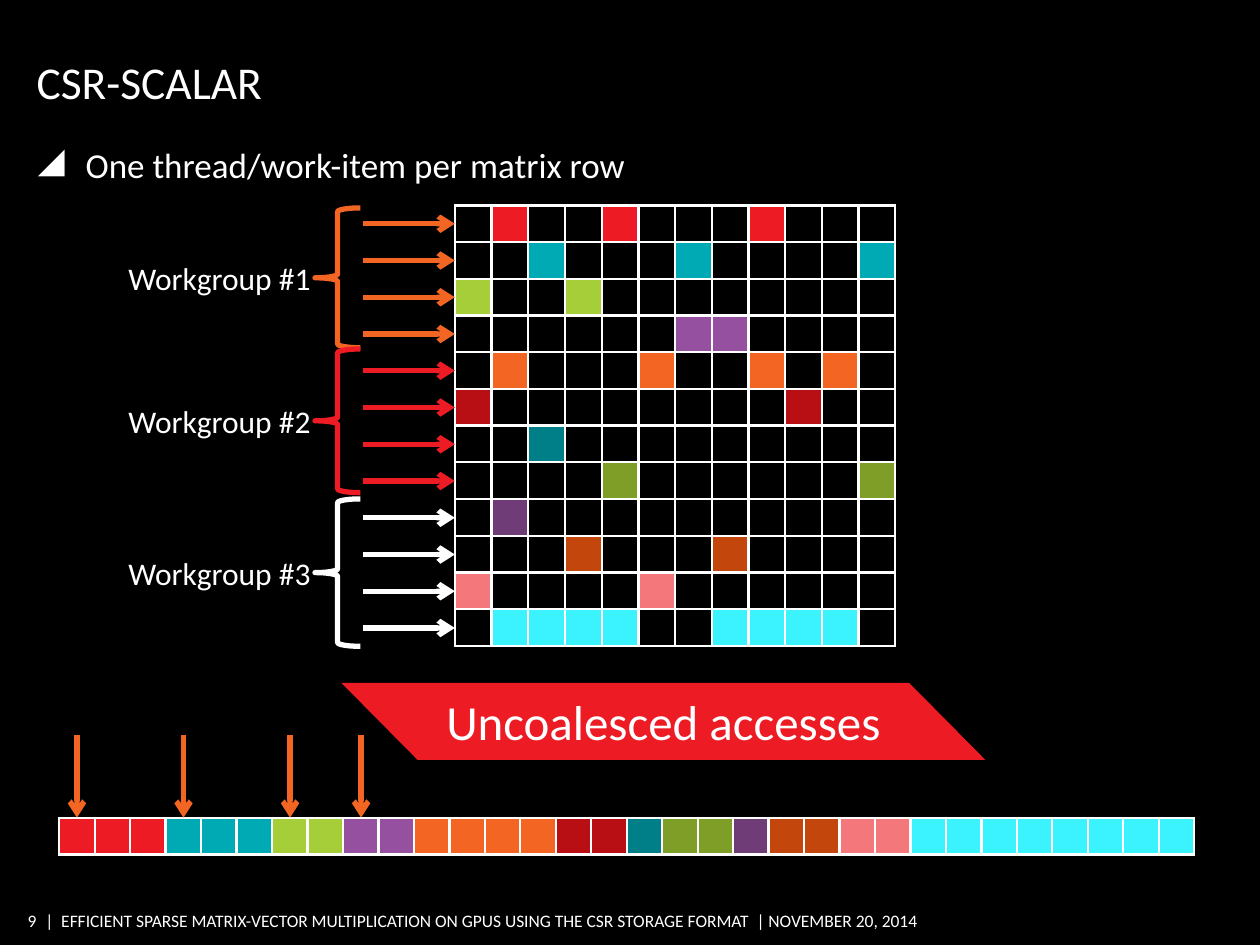
from lxml.etree import SubElement
from pptx import Presentation
from pptx.dml.color import RGBColor
from pptx.enum.shapes import MSO_CONNECTOR, MSO_SHAPE
from pptx.enum.text import MSO_ANCHOR, PP_ALIGN
from pptx.oxml.ns import qn
from pptx.util import Inches, Pt

WHITE, ORANGE, RED, BLACK = "FFFFFF", "F26522", "ED1C24", "000000"
TITLE = "CSR-SCALAR"
BULLET = "One thread/work-item per matrix row"
CALLOUT = "Uncoalesced accesses"
PAGE = "9"
FOOTER = ("|  EFFICIENT SPARSE MATRIX-VECTOR MULTIPLICATION ON GPUS "
          "USING THE CSR STORAGE FORMAT  | NOVEMBER 20, 2014")
MATRIX_ROWS = [
    (RED, [1, 4, 8]),
    ("00AAB5", [2, 6, 11]),
    ("A6CE39", [0, 3]),
    ("9650A0", [6, 7]),
    (ORANGE, [1, 5, 8, 10]),
    ("B80F15", [0, 9]),
    ("007F88", [2]),
    ("7E9E27", [4, 11]),
    ("703C78", [1]),
    ("C3470C", [3, 7]),
    ("F4777C", [0, 5]),
    ("3AF3FF", [1, 2, 3, 4, 7, 8, 9, 10]),
]
WORKGROUPS = [
    ("Workgroup #1", ORANGE, 1.65, 1.11),
    ("Workgroup #2", RED, 2.77, 1.14),
    ("Workgroup #3", WHITE, 3.96, 1.17),
]
GROUP_SIZE = 4
MATRIX_LEFT, MATRIX_TOP, MATRIX_SIDE = 3.61, 1.63, 3.5
ARRAY_LEFT, ARRAY_TOP, ARRAY_WIDTH = 0.47, 6.49, 9.02
CELL = MATRIX_SIDE / len(MATRIX_ROWS)


def color(value):
    return RGBColor.from_string(value)


def inches(*values):
    return [Inches(value) for value in values]


def write(frame, text, size=18, align=PP_ALIGN.LEFT, anchor=MSO_ANCHOR.TOP,
          insets=(0.1, 0.05, 0.1, 0.05), wrap=True, bullet=None):
    frame.word_wrap = wrap
    frame.vertical_anchor = anchor
    (frame.margin_left, frame.margin_top,
     frame.margin_right, frame.margin_bottom) = inches(*insets)
    paragraph = frame.paragraphs[0]
    paragraph.alignment = align
    if bullet:
        properties = paragraph._p.get_or_add_pPr()
        properties.set("marL", str(Inches(0.38)))
        properties.set("indent", str(-Inches(0.38)))
        bullet_color = SubElement(properties, qn("a:buClr"))
        SubElement(bullet_color, qn("a:srgbClr"), val=WHITE)
        SubElement(properties, qn("a:buChar"), char=bullet)
    run = paragraph.add_run()
    run.text = text
    run.font.name = "Calibri"
    run.font.size = Pt(size)
    run.font.color.rgb = color(WHITE)


def add_text(slide, box, text, **options):
    write(slide.shapes.add_textbox(*inches(*box)).text_frame, text, **options)


def add_arrow(slide, start, end, line_color):
    arrow = slide.shapes.add_connector(MSO_CONNECTOR.STRAIGHT, *inches(*start, *end))
    arrow.line.color.rgb = color(line_color)
    arrow.line.width = Pt(3)
    SubElement(arrow.line._get_or_add_ln(), qn("a:tailEnd"), type="arrow")
    SubElement(arrow._element.spPr, qn("a:effectLst"))


def format_cell(cell, fill_color):
    cell.margin_left = cell.margin_right = cell.margin_top = cell.margin_bottom = 0
    SubElement(cell.text_frame.paragraphs[0]._p, qn("a:endParaRPr"), sz="800")
    properties = cell._tc.get_or_add_tcPr()
    for side in ("lnL", "lnR", "lnT", "lnB"):
        border = SubElement(properties, qn(f"a:{side}"), w=str(Pt(1.5)))
        fill = SubElement(border, qn("a:solidFill"))
        SubElement(fill, qn("a:srgbClr"), val=WHITE)
    if fill_color:
        cell.fill.solid()
        cell.fill.fore_color.rgb = color(fill_color)
    else:
        cell.fill.background()


def add_grid(slide, left, top, width, height, fills):
    table = slide.shapes.add_table(
        len(fills), len(fills[0]), *inches(left, top, width, height)).table
    table.first_row = table.horz_banding = False
    for column in table.columns:
        column.width = Inches(width / len(fills[0]))
    for row_index, row in enumerate(fills):
        table.rows[row_index].height = Inches(height / len(fills))
        for column_index, fill_color in enumerate(row):
            format_cell(table.cell(row_index, column_index), fill_color)


def add_matrix(slide):
    count = len(MATRIX_ROWS)
    fills = [[row_color if column in filled else None for column in range(count)]
             for row_color, filled in MATRIX_ROWS]
    add_grid(slide, MATRIX_LEFT, MATRIX_TOP, MATRIX_SIDE, MATRIX_SIDE, fills)


def add_workgroups(slide):
    for group, (label, group_color, top, height) in enumerate(WORKGROUPS):
        add_text(slide, (0.92, top + height / 2 - 0.2, 1.68, 0.4), label, wrap=False)
        brace = slide.shapes.add_shape(
            MSO_SHAPE.LEFT_BRACE, *inches(2.5, top, 0.36, height))
        brace.shadow.inherit = False
        brace.fill.background()
        brace.line.color.rgb = color(group_color)
        brace.line.width = Pt(3)
        for row in range(group * GROUP_SIZE, (group + 1) * GROUP_SIZE):
            y = MATRIX_TOP + (row + 0.5) * CELL
            add_arrow(slide, (2.88, y), (MATRIX_LEFT, y), group_color)


def add_value_array(slide):
    values = [row_color for row_color, filled in MATRIX_ROWS for _ in filled]
    add_grid(slide, ARRAY_LEFT, ARRAY_TOP, ARRAY_WIDTH, CELL, [values])
    for row_color, _ in MATRIX_ROWS[:GROUP_SIZE]:
        x = ARRAY_LEFT + (values.index(row_color) + 0.5) * ARRAY_WIDTH / len(values)
        add_arrow(slide, (x, 5.83), (x, ARRAY_TOP), ORANGE)


def add_callout(slide):
    callout = slide.shapes.add_shape(
        MSO_SHAPE.PARALLELOGRAM, *inches(2.71, 5.42, 5.11, 0.61))
    callout.shadow.inherit = False
    callout.adjustments[0] = 0.99
    callout._element.spPr.find(qn("a:xfrm")).set("flipH", "1")
    callout.fill.solid()
    callout.fill.fore_color.rgb = color(RED)
    callout.line.fill.background()
    write(callout.text_frame, CALLOUT, size=28, align=PP_ALIGN.CENTER,
          anchor=MSO_ANCHOR.MIDDLE, wrap=False)


def main():
    """Build the CSR-Scalar slide and save it."""
    presentation = Presentation()
    presentation.slide_width, presentation.slide_height = inches(10, 7.5)
    slide = presentation.slides.add_slide(presentation.slide_layouts[6])
    slide.background.fill.solid()
    slide.background.fill.fore_color.rgb = color(BLACK)
    footer_style = dict(size=10, anchor=MSO_ANCHOR.MIDDLE,
                        insets=(0, 0.04, 0, 0.04), wrap=False)
    add_text(slide, (0.13, 7.18, 0.16, 0.26), PAGE, align=PP_ALIGN.RIGHT, **footer_style)
    add_text(slide, (0.36, 7.18, 7.08, 0.26), FOOTER, **footer_style)
    add_text(slide, (0.29, 0.34, 8.2, 0.52), TITLE, size=26,
             anchor=MSO_ANCHOR.BOTTOM, insets=(0, 0.05, 0, 0))
    add_matrix(slide)
    add_text(slide, (0.3, 1.09, 9.4, 0.45), BULLET, size=20,
             insets=(0, 0.05, 0, 0.05), bullet="◢")
    add_workgroups(slide)
    add_value_array(slide)
    add_callout(slide)
    presentation.save("out.pptx")


if __name__ == "__main__":
    main()
